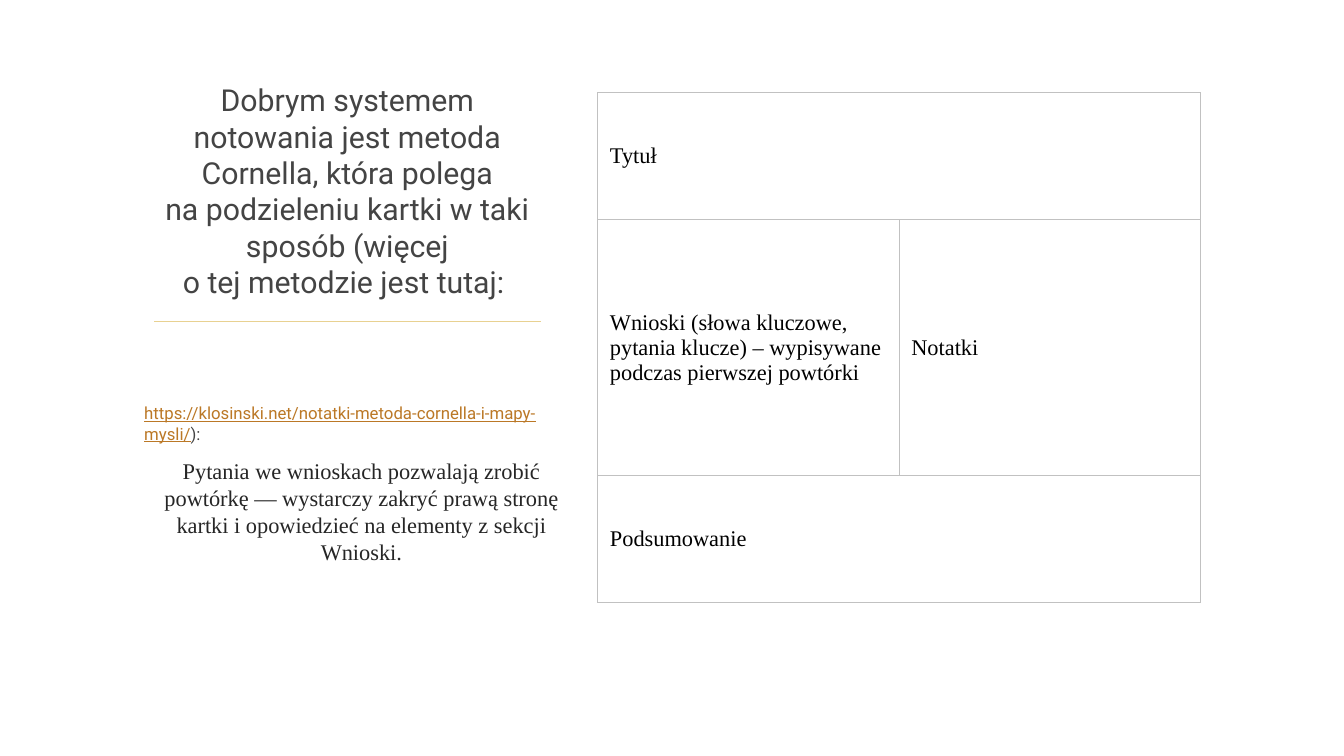
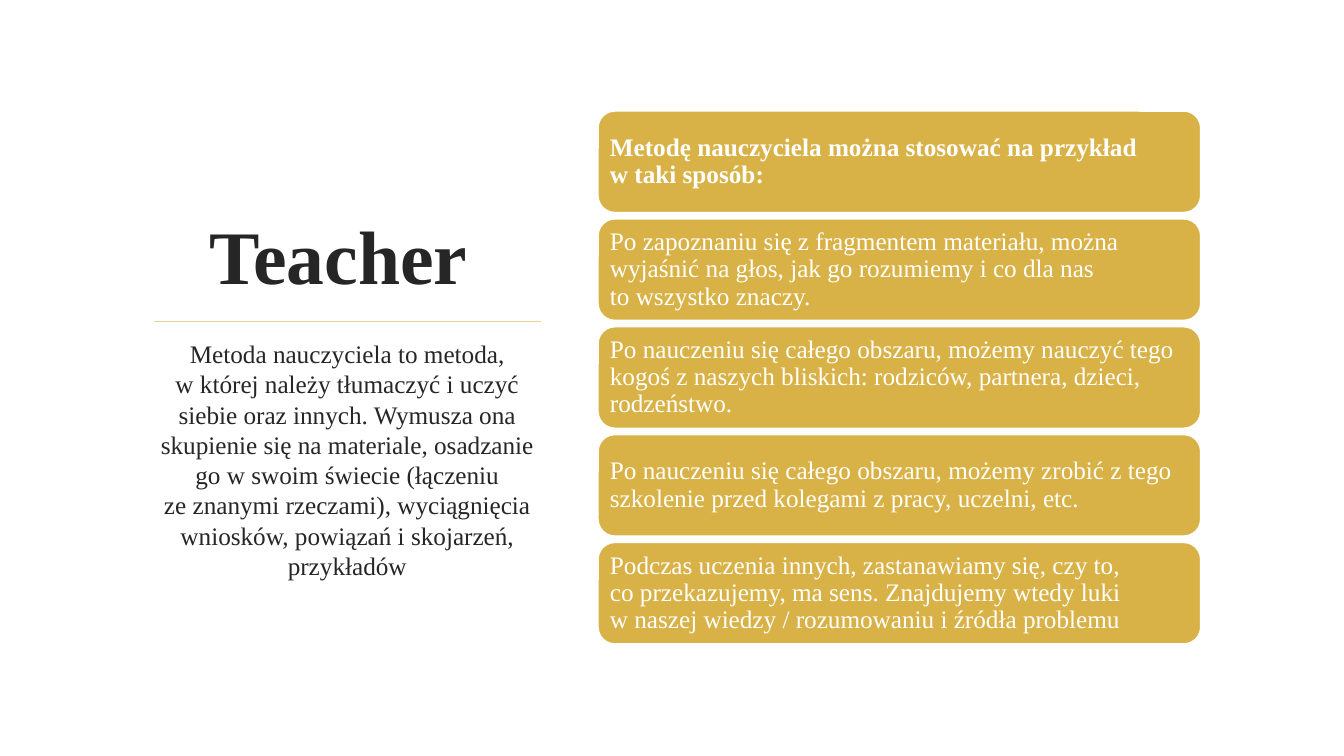
from lxml import etree
from pptx import Presentation
from pptx.dml.color import RGBColor
from pptx.enum.shapes import MSO_CONNECTOR as Link, MSO_SHAPE as Shape
from pptx.enum.text import MSO_ANCHOR as Anchor, MSO_AUTO_SIZE as Fit, PP_ALIGN as Align
from pptx.oxml.ns import qn
from pptx.util import Emu, Pt

SCALE = 9144  # 100 px to the inch
TIE = chr(160)  # no-break space, marked ~ in the texts
WHITE = RGBColor(0xFF, 0xFF, 0xFF)
BLACK = RGBColor(0, 0, 0)
INK = RGBColor(0x26, 0x26, 0x26)
GREY = RGBColor(0x44, 0x44, 0x44)
GOLD = RGBColor(0xD9, 0xB2, 0x47)
PALE = RGBColor(0xE8, 0xD1, 0x91)
RUST = RGBColor(0xBB, 0x78, 0x26)
EDGE = RGBColor(0xC1, 0xC1, 0xC1)
SERIF, SANS = "Times New Roman", "Roboto"

LEFT, WIDE = 141, 407
RIGHT, SPAN = 593, 598
RULE = (153, 319, 537, 319)
CARD, STEP, TOP = 101, 107, 110

NOTES = {
    "title": "Dobrym systemem notowania jest metoda Cornella, która~polega na~podzieleniu kartki w~taki sposób (więcej o~tej~metodzie jest tutaj:~",
    "url": "https://klosinski.net/notatki-metoda-cornella-i-mapy-mysli/",
    "end": "):",
    "body": "Pytania we~wnioskach pozwalają zrobić powtórkę —~wystarczy~zakryć prawą stronę kartki i~opowiedzieć na~elementy z~sekcji Wnioski.",
    "rows": [
        (126, ["Tytuł"]),
        (254, ["Wnioski (słowa kluczowe, pytania klucze) – wypisywane podczas pierwszej powtórki", "Notatki"]),
        (126, ["Podsumowanie"]),
    ],
}
TEACHER = {
    "title": "Teacher ",
    "body": "Metoda nauczyciela~to~metoda, w~której~należy tłumaczyć i~uczyć siebie oraz~innych. Wymusza ona skupienie się na~materiale, osadzanie go~w~swoim świecie (łączeniu ze~znanymi rzeczami), wyciągnięcia wniosków, powiązań i~skojarzeń, przykładów",
    "cards": [
        "Metodę nauczyciela można stosować na~przykład w~taki sposób:",
        "Po~zapoznaniu się z~fragmentem materiału, można wyjaśnić na~głos, jak go~rozumiemy i~co~dla nas to~wszystko znaczy.",
        "Po~nauczeniu się całego obszaru, możemy nauczyć tego kogoś z~naszych bliskich: rodziców, partnera, dzieci, rodzeństwo.",
        "Po~nauczeniu się całego obszaru, możemy zrobić z~tego szkolenie przed~kolegami z~pracy, uczelni, etc.",
        "Podczas uczenia innych, zastanawiamy się, czy~to, co~przekazujemy, ma~sens. Znajdujemy wtedy luki w~naszej wiedzy / rozumowaniu i~źródła problemu",
    ],
}


def px(*sizes):
    return [Emu(size * SCALE) for size in sizes]


def inset(part, size):
    """Set the same margin on all four sides of a text frame or cell."""
    for side in ("left", "right", "top", "bottom"):
        setattr(part, "margin_" + side, Emu(size * SCALE))


def write(para, text, size, color, face=SERIF, bold=False, under=False):
    run = para.add_run()
    run.text = text.replace("~", TIE)
    font = run.font
    font.name, font.size, font.bold, font.underline = face, Pt(size), bold, under
    font.color.rgb = color


def add_box(slide, x, y, w, h):
    frame = slide.shapes.add_textbox(*px(x, y, w, h)).text_frame
    frame.word_wrap = True
    return frame


def add_body(slide, text, y, w, size):
    para = add_box(slide, LEFT, y, w, 598 - y).paragraphs[0]
    para.alignment = Align.CENTER
    write(para, text, size, INK)


def start(deck, text, top, size, color, **style):
    """Add a slide with its title above the gold rule."""
    slide = deck.slides.add_slide(deck.slide_layouts[5])
    title = slide.shapes.title
    title.left, title.top, title.width, title.height = px(LEFT, top, WIDE, 302 - top)
    frame = title.text_frame
    frame.auto_size, frame.word_wrap = Fit.NONE, True
    frame.vertical_anchor = Anchor.BOTTOM
    para = frame.paragraphs[0]
    para.alignment = Align.CENTER
    write(para, text, size, color, **style)
    rule = slide.shapes.add_connector(Link.STRAIGHT, *px(*RULE))
    rule.line.fill.solid()
    rule.line.fill.fore_color.rgb = PALE
    rule.line.width = Pt(1.25)
    etree.SubElement(rule._element.spPr, qn("a:effectLst"))
    return slide


def border(cell):
    props = cell._tc.get_or_add_tcPr()
    for spot, side in enumerate("LRTB"):
        line = etree.Element(qn("a:ln" + side), w=str(Pt(0.75)))
        fill = etree.SubElement(line, qn("a:solidFill"))
        etree.SubElement(fill, qn("a:srgbClr"), val=str(EDGE))
        props.insert(spot, line)


def add_grid(slide, rows):
    tall = sum(high for high, _ in rows)
    grid = slide.shapes.add_table(len(rows), 2, *px(RIGHT, 92, SPAN, tall)).table
    grid.first_row = grid.horz_banding = False
    for r, (high, texts) in enumerate(rows):
        grid.rows[r].height = Emu(high * SCALE)
        for cell in grid.rows[r].cells:
            cell.fill.background()
            border(cell)
            inset(cell, 12)
            cell.vertical_anchor = Anchor.MIDDLE
        if len(texts) == 1:
            grid.cell(r, 0).merge(grid.cell(r, 1))
        for c, text in enumerate(texts):
            write(grid.cell(r, c).text_frame.paragraphs[0], text, 16, BLACK)


def add_card(slide, text, y, bold):
    card = slide.shapes.add_shape(Shape.ROUNDED_RECTANGLE, *px(RIGHT, y, SPAN, CARD))
    card.shadow.inherit = False
    card.fill.solid()
    card.fill.fore_color.rgb = GOLD
    card.line.color.rgb, card.line.width = WHITE, Pt(1.25)
    frame = card.text_frame
    frame.word_wrap, frame.vertical_anchor = True, Anchor.MIDDLE
    inset(frame, 7)
    para = frame.paragraphs[0]
    para.alignment, para.line_spacing = Align.LEFT, 0.9
    write(para, text, 18, WHITE, bold=bold)


def add_notes(deck):
    slide = start(deck, NOTES["title"], 92, 21.6, GREY, face=SANS)
    add_grid(slide, NOTES["rows"])
    add_body(slide, NOTES["body"], 449, 435, 16)
    frame = add_box(slide, 143, 400, 418, 40)
    frame.vertical_anchor = Anchor.MIDDLE
    inset(frame, 0)
    para = frame.paragraphs[0]
    write(para, NOTES["url"], 12, RUST, SANS, under=True)
    write(para, NOTES["end"], 12, GREY, SANS)


def add_teacher(deck):
    slide = start(deck, TEACHER["title"], 152, 54, INK, bold=True)
    for i, text in enumerate(TEACHER["cards"]):
        add_card(slide, text, TOP + i * STEP, bold=i == 0)
    add_body(slide, TEACHER["body"], 331, WIDE, 18)


def main():
    deck = Presentation()
    deck.slide_width, deck.slide_height = px(1333, 750)
    add_notes(deck)
    add_teacher(deck)
    deck.save("out.pptx")


if __name__ == "__main__":
    main()
